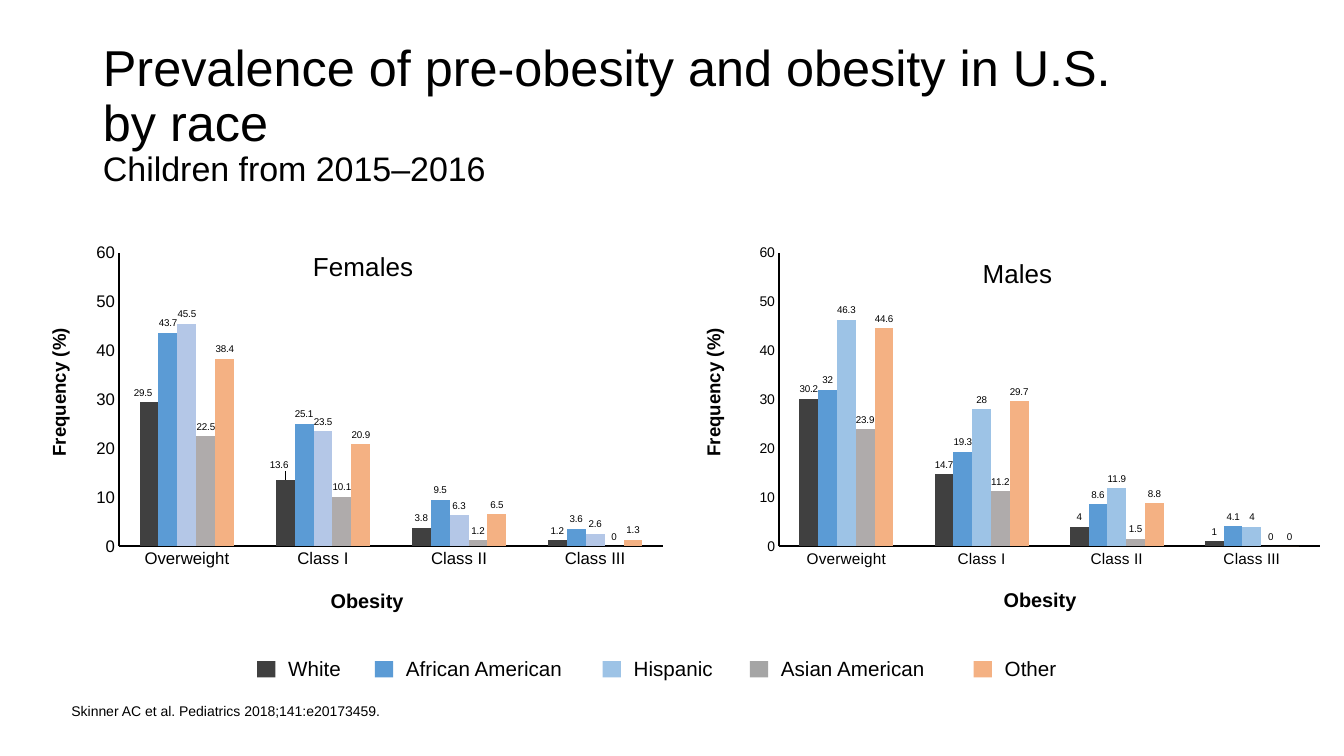
from dataclasses import dataclass

from lxml import etree
from pptx import Presentation
from pptx.chart.data import CategoryChartData
from pptx.dml.color import RGBColor
from pptx.enum import chart as ch, shapes, text
from pptx.oxml.ns import qn
from pptx.util import Cm, Pt

FONT = "Arial"
BLACK = "000000"
CATEGORIES = ["Overweight", "Class I", "Class II", "Class III"]


@dataclass
class Panel:
    title: str
    left: float
    width: float
    title_at: tuple[float, float]
    sizes: tuple[int, int]  # category axis, value axis
    hispanic: str
    rows: list[list[float]]
    freq: tuple[float, float]  # left, width
    obesity: tuple[float, float]  # left, top
    moved: dict[int, tuple[float, float]]  # shifted labels of the first series


@dataclass
class Key:
    name: str
    left: float
    width: float
    color: str


PANELS = [
    Panel("Females", 1.37, 15.37, (0.417, 0.167), (12, 12), "B4C7E7",
          [[29.5, 13.6, 3.8, 1.2], [43.7, 25.1, 9.5, 3.6], [45.5, 23.5, 6.3, 2.6],
           [22.5, 10.1, 1.2, 0], [38.4, 20.9, 6.5, 1.3]],
          (-1.09, 5.13), (6.81, 14.71), {0: (-0.01, 0), 1: (-0.01, -0.01)}),
    Panel("Males", 18.01, 15.27, (0.435, 0.18), (11, 10), "9DC3E6",
          [[30.2, 14.7, 4, 1], [32, 19.3, 8.6, 4.1], [46.3, 28, 11.9, 4],
           [23.9, 11.2, 1.5, 0], [44.6, 29.7, 8.8, 0]],
          (15.57, 4.8), (23.77, 14.68), {}),
]
KEYS = [
    Key("White", 6.48, 2.54, "404040"),
    Key("African American", 9.45, 5.82, "5B9BD5"),
    Key("Hispanic", 15.19, 3.76, "9DC3E6"),
    Key("Asian American", 18.9, 4.75, "A5A5A5"),
    Key("Other", 24.54, 2.34, "F4B183"),
]


def rgb(color: str) -> RGBColor:
    return RGBColor.from_string(color)


def style(font, size: float, bold: bool = False) -> None:
    font.name, font.size, font.bold = FONT, Pt(size), bold
    font.color.rgb = rgb(BLACK)


def add_text(s, words: str, left: float, top: float, width: float, height: float,
             size: float, bold: bool = False, align=text.PP_ALIGN.LEFT,
             anchor=text.MSO_ANCHOR.TOP):
    sp = s.shapes.add_textbox(Cm(left), Cm(top), Cm(width), Cm(height))
    tf = sp.text_frame
    tf.word_wrap, tf.vertical_anchor = True, anchor
    p = tf.paragraphs[0]
    p.text, p.alignment = words, align
    style(p.font, size, bold)
    return sp


def set_layout(parent, index: int, **values) -> None:
    """Give a chart part a manual layout, inserted at its schema position."""
    for old in parent.findall(qn("c:layout")):
        parent.remove(old)
    layout = etree.Element(qn("c:layout"))
    manual = etree.SubElement(layout, qn("c:manualLayout"))
    for tag, value in values.items():
        etree.SubElement(manual, qn(f"c:{tag}")).set("val", str(value))
    parent.insert(index, layout)


def add_panel(s, panel: Panel) -> None:
    data = CategoryChartData()
    data.categories = CATEGORIES
    for key, row in zip(KEYS, panel.rows):
        data.add_series(key.name, row)
    chart = s.shapes.add_chart(ch.XL_CHART_TYPE.COLUMN_CLUSTERED, Cm(panel.left), Cm(4.14),
                               Cm(panel.width), Cm(12.14), data).chart
    style(chart.font, 10)
    chart.has_legend = False

    # Title and plot area
    chart.has_title = True
    title = chart.chart_title
    title.include_in_layout = False
    p = title.text_frame.paragraphs[0]
    p.text = panel.title
    style(p.font, 18.6)
    x, y = panel.title_at
    set_layout(title.element, 1, xMode="edge", yMode="edge", x=x, y=y)
    set_layout(chart.element.find(".//" + qn("c:plotArea")), 0, layoutTarget="inner",
               xMode="edge", yMode="edge", x=0.106, y=0.184, w=0.894, h=0.609)

    # Axes
    for axis, size in zip((chart.category_axis, chart.value_axis), panel.sizes):
        axis.has_major_gridlines = False
        axis.major_tick_mark = axis.minor_tick_mark = ch.XL_TICK_MARK.NONE
        axis.format.line.color.rgb = rgb(BLACK)
        axis.format.line.width = Pt(1.5)
        style(axis.tick_labels.font, size)
    axis = chart.value_axis
    axis.minimum_scale, axis.maximum_scale, axis.major_unit = 0, 60, 10

    # Columns and their values
    plot = chart.plots[0]
    plot.gap_width, plot.overlap, plot.vary_by_categories = 219, 0, False
    colors = ["404040", "5B9BD5", panel.hispanic, "AFABAB", "F4B183"]
    for series, color in zip(plot.series, colors):
        series.format.fill.solid()
        series.format.fill.fore_color.rgb = rgb(color)
        labels = series.data_labels
        labels.show_value = True
        labels.position = ch.XL_LABEL_POSITION.OUTSIDE_END
        style(labels.font, 7)
    for i in panel.moved:
        label = plot.series[0].points[i].data_label
        label.position = ch.XL_LABEL_POSITION.OUTSIDE_END
        style(label.font, 7)
    for label, (x, y) in zip(chart.element.iter(qn("c:dLbl")), panel.moved.values()):
        set_layout(label, 1, x=x, y=y)

    # Axis captions
    centred = dict(bold=True, align=text.PP_ALIGN.CENTER, anchor=text.MSO_ANCHOR.MIDDLE)
    left, width = panel.freq
    sp = add_text(s, " Frequency (%)", left, 9.53, width, 0.84, 13.3, **centred)
    sp.rotation = 270
    add_text(s, "Obesity", *panel.obesity, 4.88, 0.86, 14.2, **centred)


def add_key(s, key: Key) -> None:
    sp = s.shapes.add_shape(shapes.MSO_SHAPE.RECTANGLE, Cm(key.left), Cm(16.66),
                            Cm(0.46), Cm(0.41))
    sp.shadow.inherit = False
    sp.fill.solid()
    sp.fill.fore_color.rgb = rgb(key.color)
    sp.line.fill.background()
    add_text(s, key.name, key.left + 0.53, 16.41, key.width, 0.89, 14.7)


def add_title(s) -> None:
    sp = s.shapes.title
    sp.left, sp.top, sp.width, sp.height = Cm(2.34), Cm(1.09), Cm(29.21), Cm(3.68)
    tf = sp.text_frame
    tf.auto_size, tf.word_wrap = text.MSO_AUTO_SIZE.NONE, True
    tf.vertical_anchor = text.MSO_ANCHOR.MIDDLE
    p = tf.paragraphs[0]
    p.alignment, p.line_spacing = text.PP_ALIGN.LEFT, 0.9
    lines = [("Prevalence of pre-obesity and obesity in U.S.", 36), ("by race", 36),
             ("Children from 2015–2016", 24.3)]
    for i, (words, size) in enumerate(lines):
        if i:
            p.add_line_break()
        r = p.add_run()
        r.text = words
        style(r.font, size)


def main() -> None:
    prs = Presentation()
    prs.slide_width, prs.slide_height = Cm(33.87), Cm(19.05)
    s = prs.slides.add_slide(prs.slide_layouts[5])
    add_title(s)
    for panel in PANELS:
        add_panel(s, panel)
    for key in KEYS:
        add_key(s, key)

    # Reference
    sp = add_text(s, "Skinner AC et al. Pediatrics 2018;141:e20173459.", 1.8, 17.25,
                  29.74, 0.89, 10, anchor=text.MSO_ANCHOR.BOTTOM)
    tf = sp.text_frame
    tf.margin_left = tf.margin_top = tf.margin_right = tf.margin_bottom = 0
    tf.paragraphs[0].line_spacing = 0.9
    prs.save("out.pptx")


if __name__ == "__main__":
    main()
